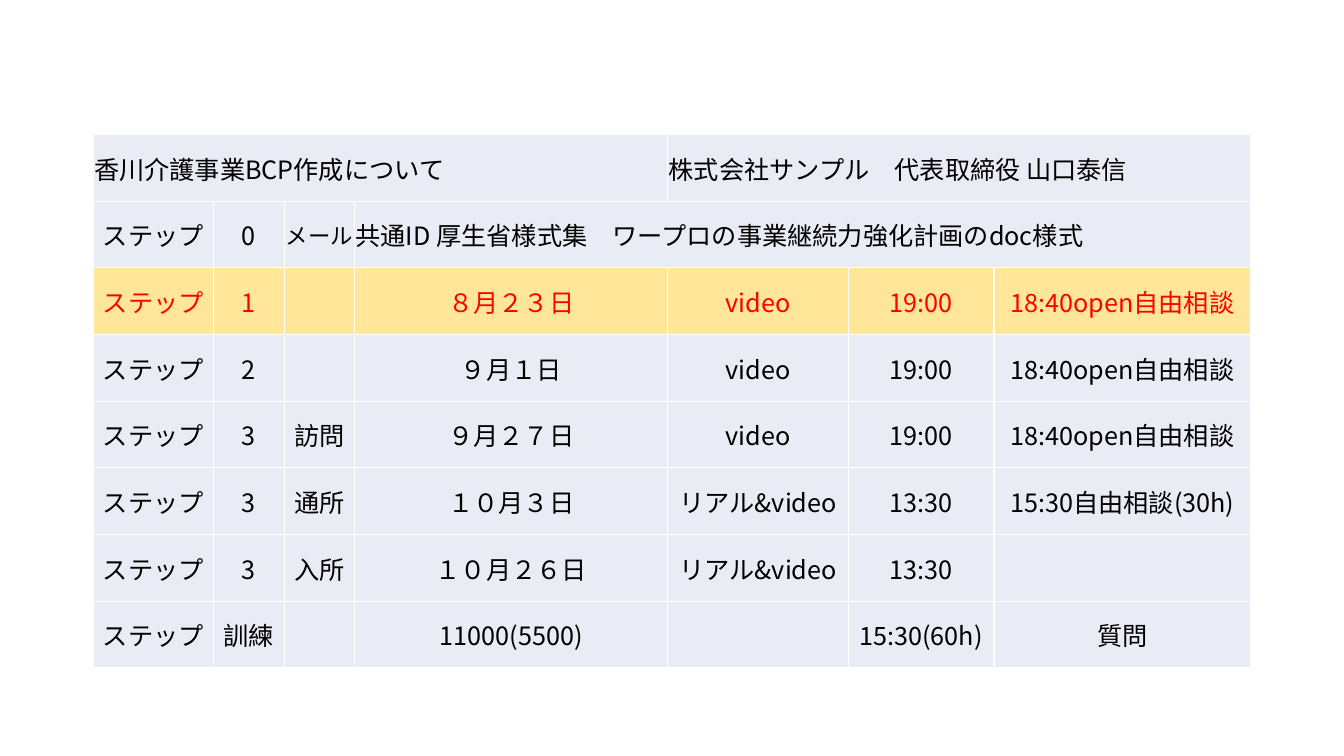
from lxml import etree
from pptx import Presentation
from pptx.dml.color import RGBColor
from pptx.enum.text import MSO_ANCHOR, PP_ALIGN
from pptx.oxml.ns import qn
from pptx.util import Cm, Pt

LEFT, CENTER = PP_ALIGN.LEFT, PP_ALIGN.CENTER
MIDDLE = MSO_ANCHOR.MIDDLE

BLACK = RGBColor(0x00, 0x00, 0x00)
RED = RGBColor(0xFF, 0x00, 0x00)
WHITE = RGBColor(0xFF, 0xFF, 0xFF)
PALE_BLUE = RGBColor(0xE9, 0xEB, 0xF5)
PALE_YELLOW = RGBColor(0xFF, 0xE6, 0x99)

FONT = "Noto Sans CJK JP"
COLUMN_WIDTHS = [3.03, 1.78, 1.78, 7.89, 4.55, 3.67, 6.47]
ROW_HEIGHT = 1.68
HIGHLIGHTED_ROW = 2

SCHEDULE = [
    ["香川介護事業BCP作成について", "", "", "",
     "株式会社サンプル　代表取締役 山口泰信", "", ""],
    ["ステップ", "0", "メール", "共通ID 厚生省様式集　ワープロの事業継続力強化計画のdoc様式", "", "", ""],
    ["ステップ", "1", "", "８月２３日", "video", "19:00", "18:40open自由相談"],
    ["ステップ", "2", "", "９月１日", "video", "19:00", "18:40open自由相談"],
    ["ステップ", "3", "訪問", "９月２７日", "video", "19:00", "18:40open自由相談"],
    ["ステップ", "3", "通所", "１０月３日", "リアル&video", "13:30", "15:30自由相談(30h)"],
    ["ステップ", "3", "入所", "１０月２６日", "リアル&video", "13:30", ""],
    ["ステップ", "訓練", "", "11000(5500)", "", "15:30(60h)", "質問"],
]

# Merged cells: (row, first column) -> last column
MERGES = {(0, 0): 3, (0, 4): 6, (1, 3): 6}
SMALL_CELL = (1, 2)


def write_text(cell, text, size=18, color=BLACK, align=CENTER):
    paragraph = cell.text_frame.paragraphs[0]
    paragraph.alignment = align
    run = paragraph.add_run()
    run.text = text
    run.font.size = Pt(size)
    run.font.color.rgb = color
    run.font.name = FONT
    east_asian = etree.SubElement(run.font._element, qn("a:ea"))
    east_asian.set("typeface", FONT)


def set_borders(cell, color=WHITE, width=1):
    properties = cell._tc.get_or_add_tcPr()
    for side in ("a:lnL", "a:lnR", "a:lnT", "a:lnB"):
        line = etree.SubElement(properties, qn(side), w=str(Pt(width)))
        fill = etree.SubElement(line, qn("a:solidFill"))
        etree.SubElement(fill, qn("a:srgbClr"), val=str(color))


def style_cell(cell, fill):
    cell.margin_left = cell.margin_right = cell.margin_top = Cm(0.02)
    cell.margin_bottom = Cm(0)
    cell.vertical_anchor = MIDDLE
    set_borders(cell)
    cell.fill.solid()
    cell.fill.fore_color.rgb = fill


def add_schedule(slide):
    frame = slide.shapes.add_table(
        len(SCHEDULE), len(COLUMN_WIDTHS), Cm(2.35), Cm(3.39),
        Cm(sum(COLUMN_WIDTHS)), Cm(ROW_HEIGHT * len(SCHEDULE)))
    schedule = frame.table
    schedule.first_row = False
    schedule.horz_banding = False
    for column, width in zip(schedule.columns, COLUMN_WIDTHS):
        column.width = Cm(width)
    for row in schedule.rows:
        row.height = Cm(ROW_HEIGHT)

    # Joined headings
    for (row, first), last in MERGES.items():
        schedule.cell(row, first).merge(schedule.cell(row, last))

    # Cell contents
    for row, entries in enumerate(SCHEDULE):
        highlighted = row == HIGHLIGHTED_ROW
        for column, text in enumerate(entries):
            cell = schedule.cell(row, column)
            style_cell(cell, PALE_YELLOW if highlighted else PALE_BLUE)
            if text:
                write_text(cell, text,
                           size=16 if (row, column) == SMALL_CELL else 18,
                           color=RED if highlighted else BLACK,
                           align=LEFT if (row, column) in MERGES else CENTER)


def main():
    presentation = Presentation()
    presentation.slide_width = Cm(33.87)
    presentation.slide_height = Cm(19.05)
    slide = presentation.slides.add_slide(presentation.slide_layouts[6])
    add_schedule(slide)
    presentation.save("out.pptx")


if __name__ == "__main__":
    main()
